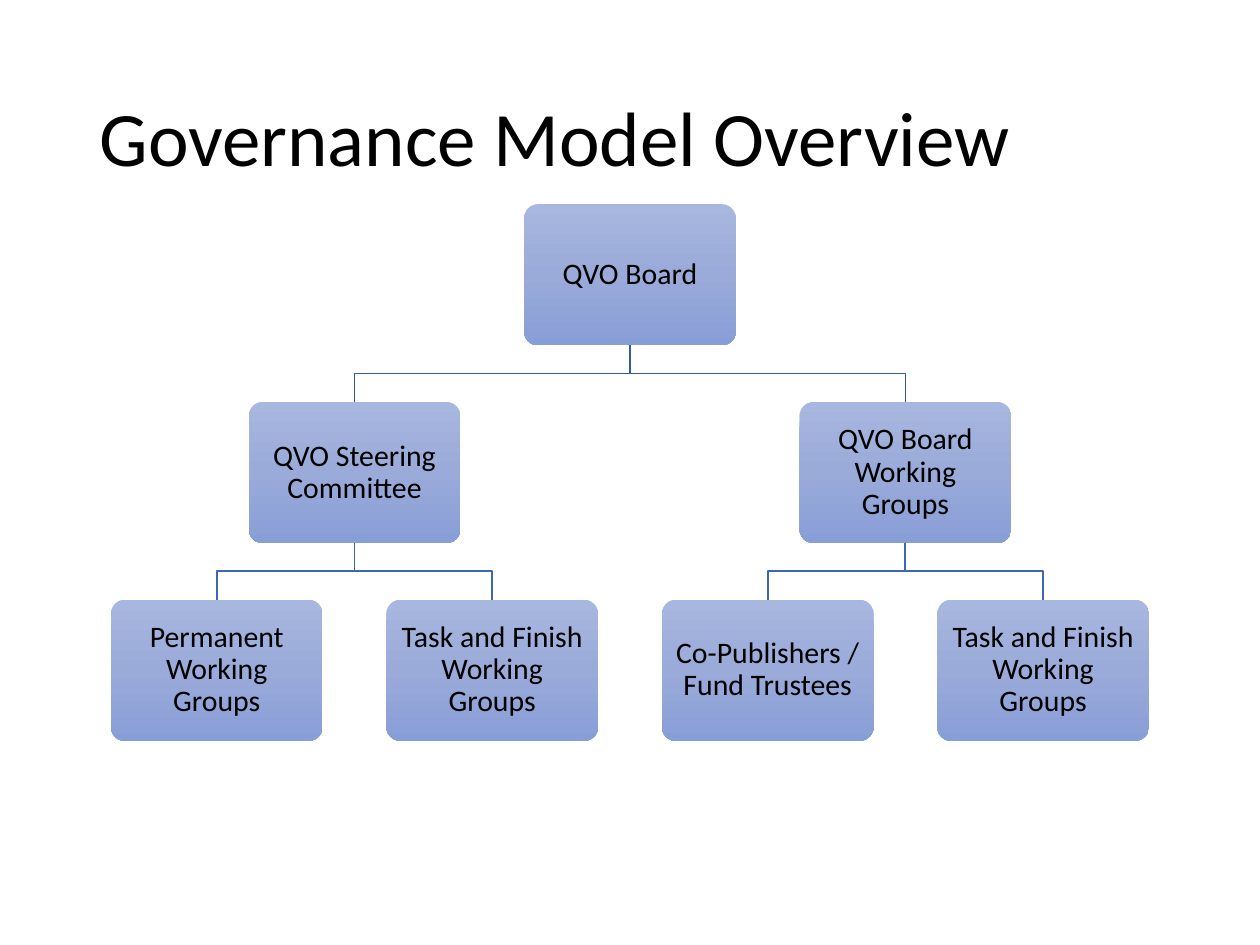
from copy import deepcopy

from pptx import Presentation
from pptx.dml.color import RGBColor
from pptx.enum.shapes import MSO_SHAPE
from pptx.enum.text import MSO_ANCHOR, PP_ALIGN
from pptx.oxml.ns import qn
from pptx.util import Inches, Pt

COLORS = {
    "text": "000000",
    "top": "A8B7DF",
    "middle": "9AABD9",
    "bottom": "889ED7",
    "links": ["365B9D", "3E67B2"],
}
FONT = "Calibri"
TREE = ("QVO Board", [
    ("QVO Steering Committee", [
        ("Permanent Working Groups", []),
        ("Task and Finish Working Groups", []),
    ]),
    ("QVO Board Working Groups", [
        ("Co-Publishers / Fund Trustees", []),
        ("Task and Finish Working Groups", []),
    ]),
])
LEAVES, LEVELS = 4, 3
COL_GAP, ROW_GAP = 0.3, 0.4  # shares of a node's width and height


def rgb(name):
    return RGBColor.from_string(COLORS.get(name, name))


def write(frame, text, size, align):
    frame.word_wrap = True
    frame.vertical_anchor = MSO_ANCHOR.MIDDLE
    frame.text = text
    line = frame.paragraphs[0]
    line.alignment = align
    line.line_spacing = 0.9
    for key, value in {"name": FONT, "size": Pt(size)}.items():
        setattr(line.runs[0].font, key, value)
    line.runs[0].font.color.rgb = rgb("text")


def shade(shape):
    """Fill a shape with the three-stop gradient, light at the top."""
    fill = shape.fill
    fill.gradient()
    fill.gradient_angle = 270
    first = shape._element.spPr.find(".//" + qn("a:gs"))
    first.addnext(deepcopy(first))
    for stop, name, place in zip(fill.gradient_stops,
                                 ("top", "middle", "bottom"), (0, 0.5, 1)):
        stop.color.rgb = rgb(name)
        stop.position = place


def add_title(slide, text, box):
    title = slide.shapes.title
    for key, value in zip(("left", "top", "width", "height"), box):
        setattr(title, key, Inches(value))
    write(title.text_frame, text, 44, PP_ALIGN.LEFT)


def add_node(slide, text, box):
    node = slide.shapes.add_shape(MSO_SHAPE.ROUNDED_RECTANGLE,
                                  *map(Inches, box))
    node.adjustments[0] = 0.1
    node.shadow.inherit = False
    node.line.fill.background()
    shade(node)
    for side in ("left", "top", "right", "bottom"):
        setattr(node.text_frame, f"margin_{side}", Inches(0.07))
    write(node.text_frame, text, 17, PP_ALIGN.CENTER)


def add_link(slide, start, end, color):
    """Draw an elbow down from start, across halfway, and down to end."""
    (x1, y1), (x2, y2) = start, end
    half = (y1 + y2) / 2
    points = [(Inches(x), Inches(y))
              for x, y in ((x1, y1), (x1, half), (x2, half), (x2, y2))]
    pen = slide.shapes.build_freeform(*points[0])
    pen.add_line_segments(points[1:], close=False)
    link = pen.convert_to_shape()
    link.shadow.inherit = False
    link.fill.background()
    link.line.color.rgb = rgb(color)
    link.line.width = Pt(1)


def add_tree(slide, tree, box):
    left, top, width, height = box
    wide = width / (LEAVES + (LEAVES - 1) * COL_GAP)
    high = height / (LEVELS + (LEVELS - 1) * ROW_GAP)
    col, row = wide * (1 + COL_GAP), high * (1 + ROW_GAP)

    def grow(branch, level, first):
        """Place a branch from leaf column first; return its middle and span."""
        text, kids = branch
        mids, span = [], 0
        for kid in kids:
            mid, size = grow(kid, level + 1, first + span)
            mids.append(mid)
            span += size
        center = sum(mids) / len(mids) if mids else left + wide / 2 + first * col
        y = top + level * row
        for mid in mids:
            add_link(slide, (center, y + high), (mid, y + row),
                     COLORS["links"][level])
        add_node(slide, text, (center - wide / 2, y, wide, high))
        return center, max(span, 1)

    grow(tree, 0, 0)


def main():
    deck = Presentation()
    deck.slide_width, deck.slide_height = Inches(10), Inches(7.5)
    slide = deck.slides.add_slide(deck.slide_layouts[5])
    add_title(slide, "Governance Model Overview", (0.69, 0.4, 8.62, 1.45))
    add_tree(slide, TREE, (0.88, 1.62, 8.24, 4.26))
    deck.save("out.pptx")


if __name__ == "__main__":
    main()
